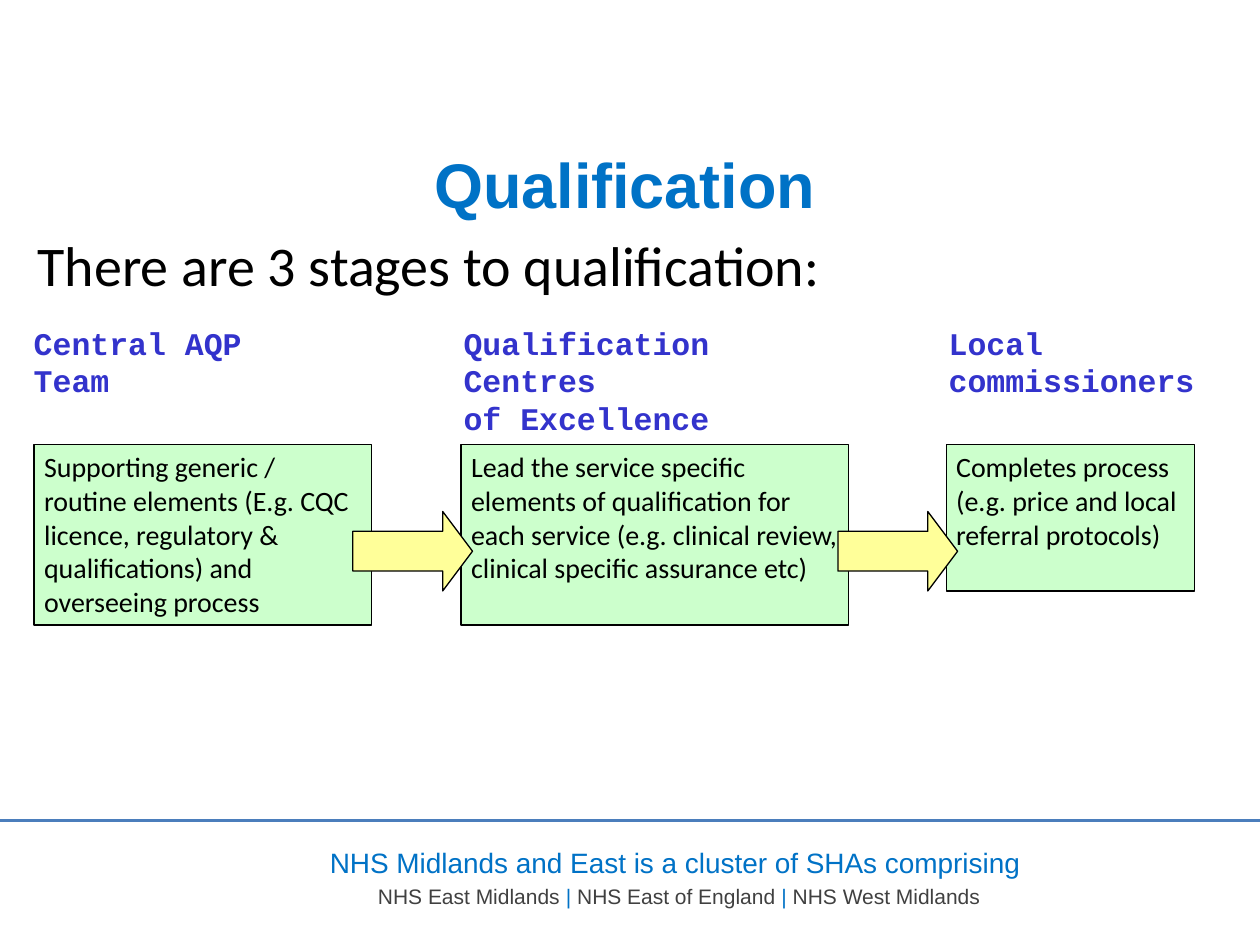
from lxml import etree
from pptx import Presentation
from pptx.dml.color import RGBColor
from pptx.enum import shapes, text
from pptx.oxml import ns
from pptx.util import Pt

BLUE, GREY, INDIGO, BLACK = "0072C6", "404040", "3333CC", "000000"
GREEN, YELLOW, RULE = "CCFFCC", "FFFF99", "4B7EBC"

FOOTER = [
    (16, [("NHS Midlands and East is a cluster of SHAs comprising ", BLUE)]),
    (12, [("NHS East Midlands ", GREY), ("|", BLUE), (" NHS East of England", GREY),
          (" |", BLUE), (" NHS West Midlands", GREY)]),
]
STAGES = [
    {"heading": ["Central AQP Team"], "heading_left": 12.2, "heading_width": 166.3,
     "detail": "Supporting generic / routine elements (E.g. CQC licence, regulatory "
               "& qualifications) and overseeing process",
     "left": 19.5, "width": 193, "height": 103},
    {"heading": ["Qualification Centres", "of Excellence"],
     "heading_left": 257.8, "heading_width": 186.5,
     "detail": "Lead the service specific elements of qualification for each service "
               "(e.g. clinical review, clinical specific assurance etc)",
     "left": 263.5, "width": 221.2, "height": 103},
    {"heading": ["Local commissioners"], "heading_left": 535, "heading_width": 165.6,
     "detail": "Completes process (e.g. price and local referral protocols)",
     "left": 540.7, "width": 141.8, "height": 83.5},
]
HEADING_TOP, HEADING_HEIGHT, BOX_TOP = 181.4, 50.4, 254.2
ARROW_TOP, ARROW_WIDTH, ARROW_HEIGHT, ARROW_OVERLAP = 292.3, 68.4, 45.4, 6.5


def color(value):
    return RGBColor.from_string(value)


def add_run(paragraph, words, size, font, ink, bold=False):
    run = paragraph.add_run()
    run.text = words
    run.font.size, run.font.name, run.font.bold = Pt(size), font, bold
    run.font.color.rgb = color(ink)


def next_paragraph(frame, index):
    return frame.add_paragraph() if index else frame.paragraphs[0]


def add_text_box(slide, left, top, width, height):
    frame = slide.shapes.add_textbox(Pt(left), Pt(top), Pt(width), Pt(height)).text_frame
    frame.word_wrap = True
    return frame


def add_filled_shape(slide, kind, left, top, width, height, fill):
    shape = slide.shapes.add_shape(kind, Pt(left), Pt(top), Pt(width), Pt(height))
    shape.shadow.inherit = False
    shape.fill.solid()
    shape.fill.fore_color.rgb = color(fill)
    shape.line.color.rgb = color(BLACK)
    shape.line.width = Pt(0.75)
    return shape


def add_rule(slide, width):
    rule = slide.shapes.add_connector(
        shapes.MSO_CONNECTOR.STRAIGHT, 0, Pt(468.7), width, Pt(468.7))
    rule.line.color.rgb = color(RULE)
    rule.line.width = Pt(1.75)
    etree.SubElement(rule._element.spPr, ns.qn("a:effectLst"))


def add_footer(slide):
    frame = add_text_box(slide, 115.9, 479.5, 544.3, 51.1)
    for index, (size, runs) in enumerate(FOOTER):
        paragraph = next_paragraph(frame, index)
        paragraph.alignment = text.PP_ALIGN.CENTER
        if index:
            paragraph.space_before = Pt(size * 0.2)
        for words, ink in runs:
            add_run(paragraph, words, size, "Arial", ink)


def add_stage(slide, stage):
    heading = add_text_box(slide, stage["heading_left"], HEADING_TOP,
                           stage["heading_width"], HEADING_HEIGHT)
    for index, words in enumerate(stage["heading"]):
        add_run(next_paragraph(heading, index), words, 18, "Courier New", INDIGO, True)

    box = add_filled_shape(slide, shapes.MSO_SHAPE.RECTANGLE, stage["left"], BOX_TOP,
                           stage["width"], stage["height"], GREEN)
    frame = box.text_frame
    frame.word_wrap = True
    frame.vertical_anchor = text.MSO_ANCHOR.TOP
    frame.margin_left = frame.margin_right = Pt(5.7)
    frame.margin_top = frame.margin_bottom = Pt(2.9)
    paragraph = frame.paragraphs[0]
    paragraph.alignment = text.PP_ALIGN.LEFT
    add_run(paragraph, stage["detail"], 16, "Calibri", BLACK)


def main():
    presentation = Presentation()
    presentation.slide_width, presentation.slide_height = Pt(720), Pt(540)
    slide = presentation.slides.add_slide(presentation.slide_layouts[6])

    add_rule(slide, presentation.slide_width)

    title = add_text_box(slide, 48.2, 71.3, 617.8, 67)
    title.vertical_anchor = text.MSO_ANCHOR.MIDDLE
    title.paragraphs[0].alignment = text.PP_ALIGN.CENTER
    add_run(title.paragraphs[0], "Qualification", 36, "Arial", BLUE, True)

    add_footer(slide)

    intro = add_text_box(slide, 14.4, 128.2, 653.8, 69.8)
    add_run(intro.paragraphs[0], "There are 3 stages to qualification:", 32, "Calibri", BLACK)

    for stage in STAGES:
        add_stage(slide, stage)
    for stage in STAGES[1:]:
        left = stage["left"] + ARROW_OVERLAP - ARROW_WIDTH
        arrow = add_filled_shape(slide, shapes.MSO_SHAPE.RIGHT_ARROW, left, ARROW_TOP,
                                 ARROW_WIDTH, ARROW_HEIGHT, YELLOW)
        arrow.adjustments[0] = 0.5
        arrow.adjustments[1] = 0.375

    presentation.save("out.pptx")


if __name__ == "__main__":
    main()
